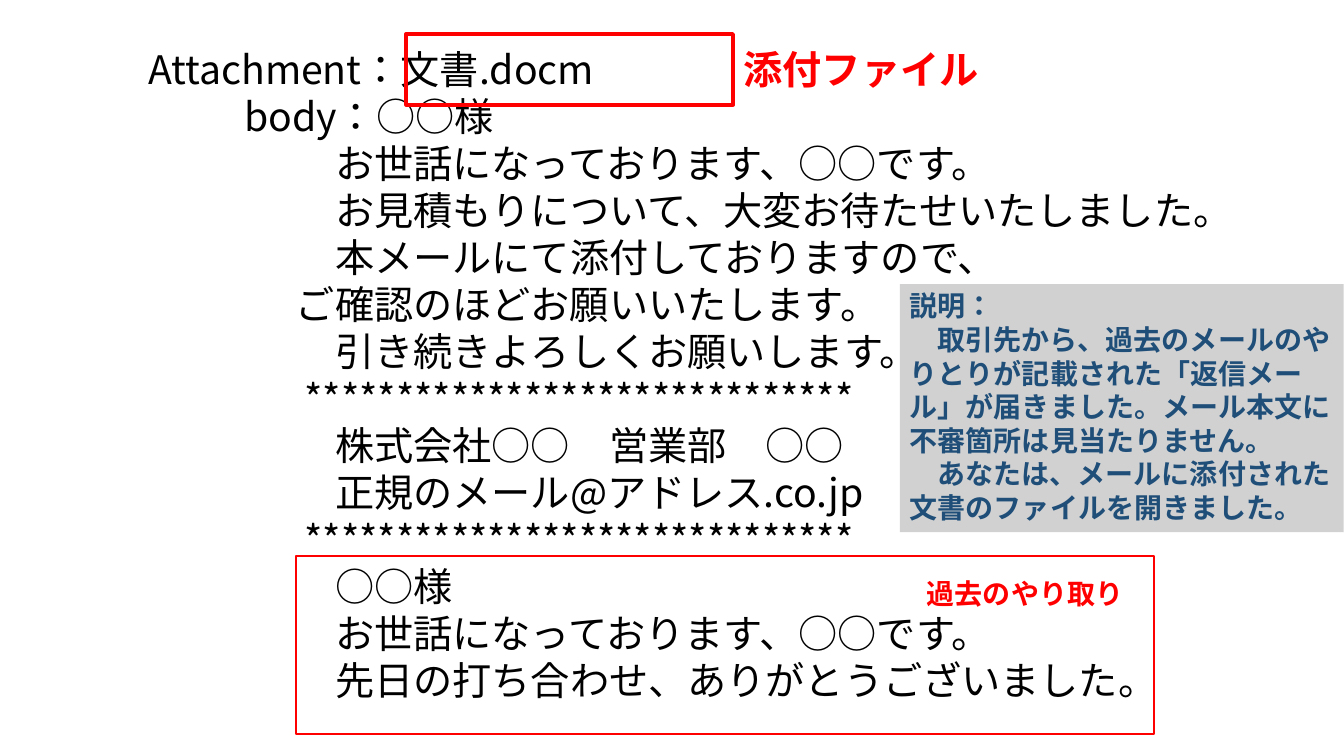
"""Builds a slide that explains a suspicious reply e-mail with an attachment."""
from lxml.etree import SubElement
from pptx import Presentation
from pptx.dml.color import RGBColor
from pptx.enum.lang import MSO_LANGUAGE_ID as Language
from pptx.enum.shapes import MSO_SHAPE as Shape
from pptx.enum.text import MSO_ANCHOR as Anchor, PP_ALIGN as Align
from pptx.oxml.ns import qn
from pptx.util import Cm, Pt

BLACK = RGBColor(0x00, 0x00, 0x00)
RED = RGBColor(0xFF, 0x00, 0x00)
NAVY = RGBColor(0x1F, 0x4E, 0x79)
GRAY = RGBColor(0xA5, 0xA5, 0xA5)
FONT = "Noto Sans CJK JP"
LINE_RATIO = 1.2

HEADER, BODY, OUTER, RULE, INNER = 1.2, 3.62, 4.92, 5.14, 5.91
STARS = "*" * 30
MAIL = [
    ("Attachment：文書.docm", HEADER),
    ("body：○○様", BODY),
    ("お世話になっております、○○です。", INNER),
    ("お見積もりについて、大変お待たせいたしました。", INNER),
    ("本メールにて添付しておりますので、", INNER),
    ("ご確認のほどお願いいたします。", OUTER),
    ("引き続きよろしくお願いします。", INNER),
    (STARS, RULE),
    ("株式会社○○　営業部　○○", INNER),
    ("正規のメール@アドレス.co.jp", INNER),
    (STARS, RULE),
    ("○○様", INNER),
    ("お世話になっております、○○です。", INNER),
    ("先日の打ち合わせ、ありがとうございました。", INNER),
]
EXPLANATION = [
    ("説明：", 0),
    ("取引先から、過去のメールのやりとりが記載された「返信メール」が届きました。"
     "メール本文に不審箇所は見当たりません。", 0.7),
    ("あなたは、メールに添付された文書のファイルを開きました。", 0.7),
]
MAIL_BOX = (2.29, 1.02, 30.81, 17.02)
EXPLANATION_BOX = (22.68, 7.16, 11.18, 6.25)
HISTORY_FRAME = (7.47, 14.02, 21.62, 4.47)
HISTORY_LABEL = (23.11, 14.4, 5.87, 1.12)
ATTACHMENT_LABEL = (18.49, 1.02, 9.37, 1.45)
ATTACHMENT_FRAME = (10.24, 0.86, 8.23, 1.78)


def write_text(shape, lines, size, color, bold=False, first_line_only=False):
    frame = shape.text_frame
    frame.word_wrap = True
    frame.vertical_anchor = Anchor.TOP
    frame.margin_top = Cm(0.12)
    for index, (text, indent) in enumerate(lines):
        paragraph = frame.add_paragraph() if index else frame.paragraphs[0]
        paragraph.alignment = Align.LEFT
        paragraph.line_spacing = Pt(round(size * LINE_RATIO, 1))
        properties = paragraph._p.get_or_add_pPr()
        properties.set("indent" if first_line_only else "marL", str(Cm(indent)))
        run = paragraph.add_run()
        run.text = text
        run.font.size = Pt(size)
        run.font.bold = bold
        run.font.color.rgb = color
        run.font.name = FONT
        run.font.language_id = Language.JAPANESE
        SubElement(run._r.get_or_add_rPr(), qn("a:ea")).set("typeface", FONT)


def add_text_box(slide, box, lines, **text_format):
    shape = slide.shapes.add_textbox(*map(Cm, box))
    write_text(shape, lines, **text_format)


def add_rectangle(slide, box, line_width=None):
    shape = slide.shapes.add_shape(Shape.RECTANGLE, *map(Cm, box))
    shape.shadow.inherit = False
    if line_width:
        shape.fill.background()
        shape.line.color.rgb = RED
        shape.line.width = Pt(line_width)
    else:
        shape.fill.solid()
        shape.fill.fore_color.rgb = GRAY
        color = shape._element.spPr.find(qn("a:solidFill"))[0]
        SubElement(color, qn("a:alpha")).set("val", "50000")
        shape.line.fill.background()
    return shape


def main():
    presentation = Presentation()
    presentation.slide_width = Cm(33.87)
    presentation.slide_height = Cm(19.05)
    slide = presentation.slides.add_slide(presentation.slide_layouts[6])

    add_text_box(slide, MAIL_BOX, MAIL, size=28, color=BLACK)
    explanation = add_rectangle(slide, EXPLANATION_BOX)
    write_text(explanation, EXPLANATION, size=20, color=NAVY, bold=True,
               first_line_only=True)
    add_rectangle(slide, HISTORY_FRAME, line_width=1.5)
    add_text_box(slide, HISTORY_LABEL, [("過去のやり取り", 0)],
                 size=20, color=RED, bold=True)
    add_text_box(slide, ATTACHMENT_LABEL, [("添付ファイル", 0)],
                 size=28, color=RED, bold=True)
    add_rectangle(slide, ATTACHMENT_FRAME, line_width=3)
    presentation.save("out.pptx")


if __name__ == "__main__":
    main()
